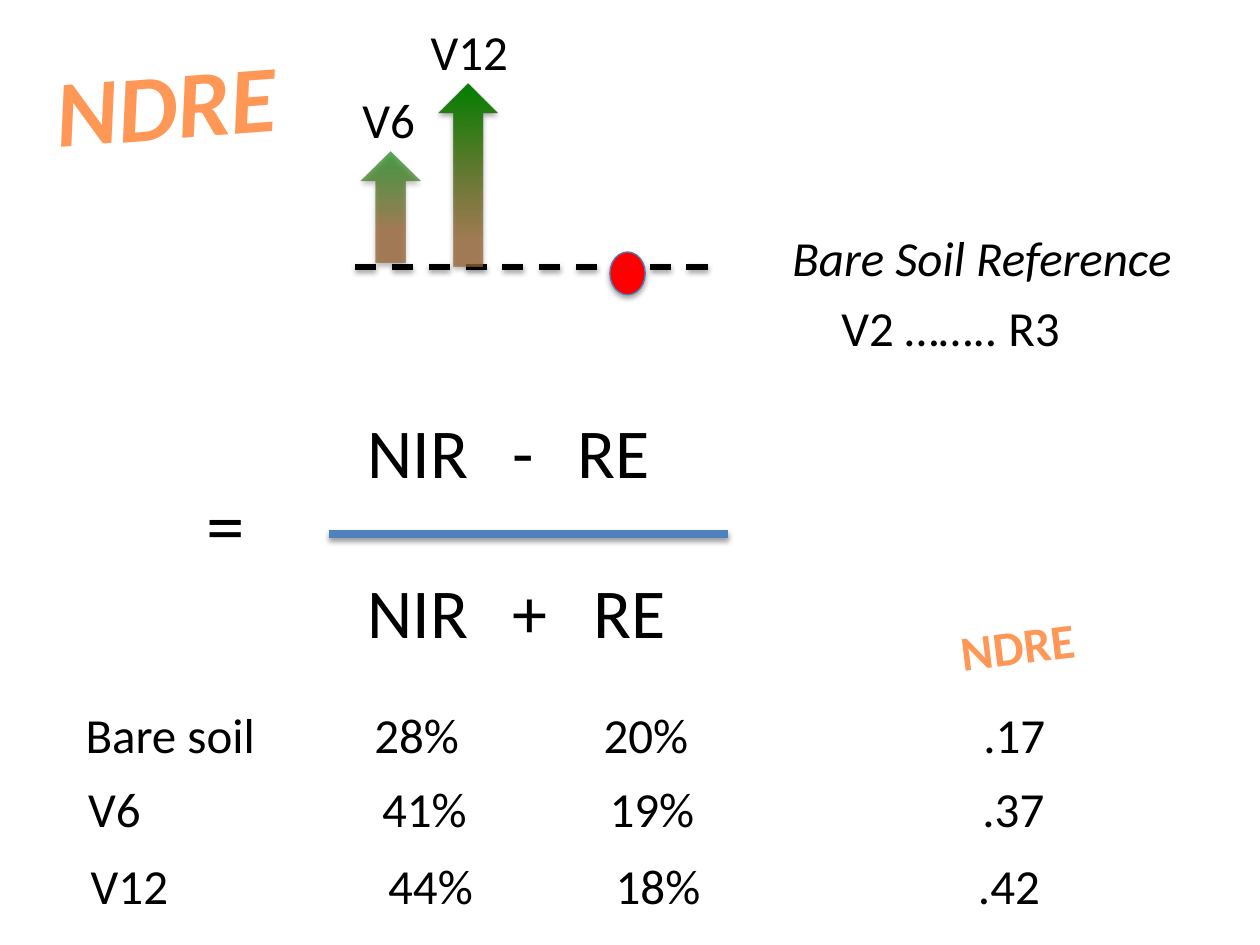
import pptx
import pptx.util
import pptx.dml.color
import pptx.enum.dml
import pptx.enum.shapes
import pptx.oxml
import pptx.oxml.ns

Pt = pptx.util.Pt
RGB = pptx.dml.color.RGBColor
Kind = pptx.enum.shapes.MSO_SHAPE
qn = pptx.oxml.ns.qn
NS = pptx.oxml.ns.nsdecls("a")

BLACK = RGB(0, 0, 0)
WHITE = RGB(255, 255, 255)
RED = RGB(255, 0, 0)
BLUE = RGB(0x4F, 0x81, 0xBD)
RIM = RGB(0x4B, 0x7E, 0xBC)
RUST = RGB(0x9D, 0x47, 0x00)
PEACH = RGB(0xFF, 0x98, 0x56)
CREAM = RGB(0xFF, 0xF5, 0xF1)
SOIL = RGB(0x99, 0x66, 0x33)
GREEN = RGB(0, 0x80, 0)
GLOW = [(0, RUST, 100), (78, PEACH, 100), (100, CREAM, 100)]


def blend(fill, node, stops, angle):
    """Gradient fill; stops are (place, colour, opacity) in percent."""
    fill.gradient()
    fill.gradient_angle = angle
    marks = "".join(
        f'<a:gs pos="{pos * 1000}"><a:srgbClr val="{tint}">'
        f'<a:alpha val="{alpha * 1000}"/></a:srgbClr></a:gs>'
        for pos, tint, alpha in stops)
    old = node.find(qn("a:gradFill")).find(qn("a:gsLst"))
    old.getparent().replace(
        old, pptx.oxml.parse_xml(f"<a:gsLst {NS}>{marks}</a:gsLst>"))


def shade(item, alpha, dist):
    """Soft shadow straight below the item."""
    props = item._element.spPr
    for old in props.findall(qn("a:effectLst")):
        props.remove(old)
    props.append(pptx.oxml.parse_xml(
        f'<a:effectLst {NS}><a:outerShdw blurRad="{Pt(3.1)}" '
        f'dist="{Pt(dist)}" dir="5400000" rotWithShape="0">'
        f'<a:srgbClr val="000000"><a:alpha val="{alpha * 1000}"/>'
        '</a:srgbClr></a:outerShdw></a:effectLst>'))


def label(slide, text, x, y, w, h, size=28, tabs=(), stops=None, turn=0, **style):
    """Text box with optional tab stops, gradient text and rotation."""
    box = slide.shapes.add_textbox(Pt(x), Pt(y), Pt(w), Pt(h))
    box.rotation = turn
    box.text_frame.word_wrap = bool(tabs)
    para = box.text_frame.paragraphs[0]
    run = para.add_run()
    run.text = text
    look = {"name": "Calibri", "size": Pt(size), **style}
    for key, value in look.items():
        setattr(run.font, key, value)
    if stops:
        blend(run.font.fill, run.font._element, stops, 270)
    else:
        run.font.color.rgb = BLACK
    if tabs:
        marks = "".join(f'<a:tab pos="{Pt(t)}" algn="l"/>' for t in tabs)
        para._p.get_or_add_pPr().append(
            pptx.oxml.parse_xml(f"<a:tabLst {NS}>{marks}</a:tabLst>"))
    return box


def rule(slide, x, y, w, tint, width, dash=None):
    """Level line with a shadow."""
    line = slide.shapes.add_connector(
        pptx.enum.shapes.MSO_CONNECTOR.STRAIGHT, Pt(x), Pt(y), Pt(x + w), Pt(y))
    look = {"width": Pt(width), "dash_style": dash}
    for key, value in look.items():
        setattr(line.line, key, value)
    line.line.color.rgb = tint
    shade(line, 38, 1.6)


def arrow(slide, x, y, h, stops):
    """Growth arrow, soil at the foot and leaf at the tip."""
    item = slide.shapes.add_shape(Kind.UP_ARROW, Pt(x), Pt(y), Pt(34), Pt(h))
    blend(item.fill, item._element.spPr, stops, 90)
    item.line.fill.background()
    shade(item, 35, 1.8)


def title(slide, x, y):
    label(slide, "NDRE", x, y, 155.5, 72.7, 54, stops=GLOW, turn=355.6,
          bold=True, italic=True)


def growth(slide, x, y):
    """Arrows over the bare soil line."""
    arrow(slide, x + 3, y + 78, 63.5, [(30, SOIL, 75), (100, GREEN, 65)])
    rule(slide, x, y + 144, 203, BLACK, 3, pptx.enum.dml.MSO_LINE.DASH)
    arrow(slide, x + 47.5, y + 39, 104.5, [(14, SOIL, 75), (100, GREEN, 100)])
    label(slide, "V6", x - 3, y + 39, 44.6, 41)
    label(slide, "V12", x + 36, y, 59, 41)
    dot = slide.shapes.add_shape(
        Kind.OVAL, Pt(x + 145.5), Pt(y + 135.4), Pt(20.2), Pt(24.5))
    dot.fill.solid()
    dot.fill.fore_color.rgb = RED
    dot.line.color.rgb = RIM
    dot.line.width = Pt(0.75)
    shade(dot, 35, 1.8)


def notes(slide, x, y):
    label(slide, "Bare Soil Reference", x, y, 242, 41, italic=True)
    label(slide, "V2 …….. R3", x + 28, y + 39.6, 140.4, 41)


def ratio(slide, x, y):
    """Equals sign and the fraction."""
    label(slide, "=", x, y + 39, 36.7, 60.5, 44)
    terms = [("NIR\t-\tRE", 0, 120), ("NIR\t+\tRE", 91.4, 129)]
    for text, drop, last in terms:
        label(slide, text, x + 92, y + drop, 195, 55.4, 40, (83, last))
    rule(slide, x + 77, y + 75.6, 228, BLUE, 4.5)


def data(slide, x, y):
    """Reflectance rows and their index values."""
    rows = [
        ("Bare soil\t28%\t20%\t.17", 0, (165, 296, 513)),
        ("V6\t41%\t19%\t.37", 42.5, (168, 298, 511)),
        ("V12\t44%\t18%\t.42", 86.4, (170, 300, 507)),
    ]
    for i, (text, drop, tabs) in enumerate(rows):
        label(slide, text, x + 1.5 * i, y + drop, 571, 41, tabs=tabs)
    head = label(slide, "NDRE", x + 499.7, y - 51, 80.6, 41, stops=GLOW,
                 turn=352.9, bold=True)
    head.fill.solid()
    head.fill.fore_color.rgb = WHITE


def main():
    deck = pptx.Presentation()
    deck.slide_width, deck.slide_height = Pt(720), Pt(540)
    slide = deck.slides.add_slide(deck.slide_layouts[6])
    title(slide, 24.5, 21.6)
    ratio(slide, 111, 229.7)
    data(slide, 41.8, 399)
    growth(slide, 203, 8.6)
    notes(slide, 445.7, 126.7)
    deck.save("out.pptx")


if __name__ == "__main__":
    main()
